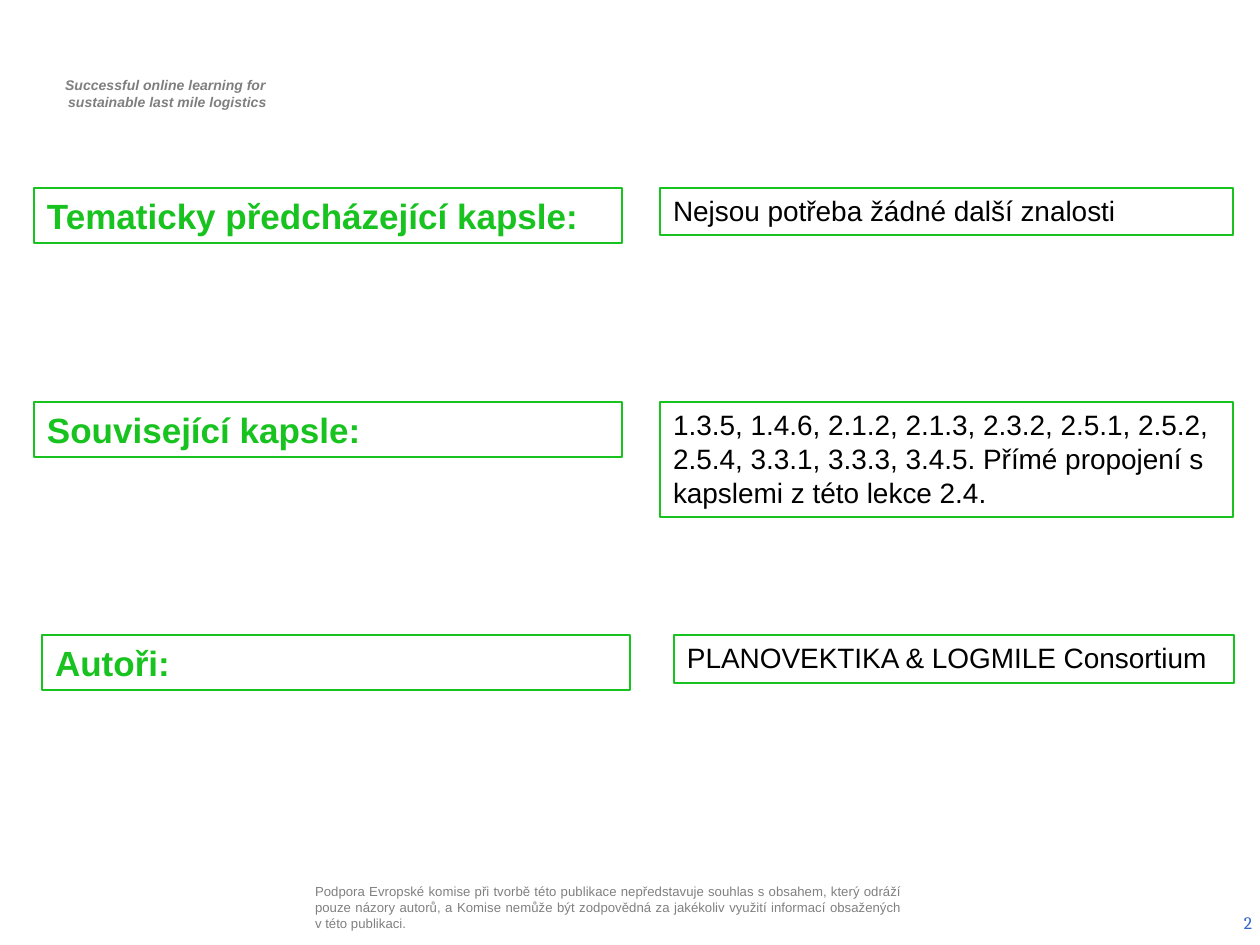
from dataclasses import dataclass

from pptx import Presentation
from pptx.dml.color import RGBColor
from pptx.enum.shapes import MSO_SHAPE
from pptx.enum.text import MSO_ANCHOR as Anchor, PP_ALIGN as Align
from pptx.util import Emu, Pt

PX = 914400 / 126
GREEN = RGBColor(0x18, 0xC3, 0x20)
BLACK = RGBColor(0x00, 0x00, 0x00)
WHITE = RGBColor(0xFF, 0xFF, 0xFF)
BLUE = RGBColor(0x33, 0x66, 0xCC)
HEADER_GREY = RGBColor(0x7F, 0x7F, 0x7F)
FOOTER_GREY = RGBColor(0x80, 0x80, 0x80)

LABEL = {"name": "Arial", "size": Pt(20), "bold": True}
VALUE = {"name": "Arial", "size": Pt(16)}
HEADER = {"name": "Arial", "size": Pt(8), "bold": True, "italic": True}
FOOTER = {"name": "Arial", "size": Pt(7.5)}
NUMBER = {"name": "Cambria", "size": Pt(10)}


@dataclass(frozen=True)
class Block:
    x: int
    y: int
    w: int
    h: int
    lines: tuple[str, ...]
    font: dict
    color: RGBColor
    align: Align = Align.LEFT
    anchor: Anchor = Anchor.TOP
    inset_x: int = 13
    inset_y: int = 6
    indent: int = 0
    framed: bool = False


@dataclass(frozen=True)
class Row:
    y: int
    label_x: int
    label: str
    value_x: int
    value_w: int
    value_h: int
    value: str


ROWS = (
    Row(188, 34, "Tematicky předcházející kapsle:",
        660, 573, 47, "Nejsou potřeba žádné další znalosti"),
    Row(402, 34, "Související kapsle:", 660, 573, 115,
        "1.3.5, 1.4.6, 2.1.2, 2.1.3, 2.3.2, 2.5.1, 2.5.2, 2.5.4, 3.3.1, "
        "3.3.3, 3.4.5. Přímé propojení s kapslemi z této lekce 2.4."),
    Row(635, 42, "Autoři:", 674, 560, 48, "PLANOVEKTIKA & LOGMILE Consortium"),
)

MARGINALS = (
    Block(37, 71, 256, 47,
          ("Successful online learning for ", "sustainable last mile logistics"),
          HEADER, HEADER_GREY, Align.CENTER, indent=5),
    Block(310, 876, 596, 63,
          ("Podpora Evropské komise při tvorbě této publikace nepředstavuje "
           "souhlas s obsahem, který odráží pouze názory autorů, a Komise "
           "nemůže být zodpovědná za jakékoliv využití informací obsažených "
           "v této publikaci.",),
          FOOTER, FOOTER_GREY, Align.JUSTIFY, Anchor.MIDDLE, 5, 5),
    Block(971, 898, 294, 50, ("2",), NUMBER, BLUE, Align.RIGHT, Anchor.MIDDLE),
)


def px(n: int) -> Emu:
    return Emu(round(n * PX))


def add_block(s, b: Block) -> None:
    box = tuple(px(n) for n in (b.x, b.y, b.w, b.h))
    if b.framed:
        sp = s.shapes.add_shape(MSO_SHAPE.RECTANGLE, *box)
        sp.shadow.inherit = False
        sp.fill.solid()
        sp.fill.fore_color.rgb = WHITE
        sp.line.color.rgb = GREEN
        sp.line.width = Pt(0.75)
    else:
        sp = s.shapes.add_textbox(*box)
    tf = sp.text_frame
    frame = {"word_wrap": True, "vertical_anchor": b.anchor,
             "margin_left": px(b.inset_x), "margin_right": px(b.inset_x),
             "margin_top": px(b.inset_y), "margin_bottom": px(b.inset_y)}
    for key, value in frame.items():
        setattr(tf, key, value)
    for i, line in enumerate(b.lines):
        p = tf.add_paragraph() if i else tf.paragraphs[0]
        p.alignment = b.align
        if b.indent:
            p._p.get_or_add_pPr().set("marL", str(px(b.indent)))
        r = p.add_run()
        r.text = line
        for key, value in b.font.items():
            setattr(r.font, key, value)
        r.font.color.rgb = b.color


def add_row(s, row: Row) -> None:
    add_block(s, Block(row.label_x, row.y, 588, 55, (row.label,),
                       LABEL, GREEN, framed=True))
    add_block(s, Block(row.value_x, row.y, row.value_w, row.value_h,
                       (row.value,), VALUE, BLACK, framed=True))


def main() -> None:
    prs = Presentation()
    prs.slide_width, prs.slide_height = px(1260), px(945)
    s = prs.slides.add_slide(prs.slide_layouts[6])
    for block in MARGINALS:
        add_block(s, block)
    for row in ROWS:
        add_row(s, row)
    prs.save("out.pptx")


if __name__ == "__main__":
    main()
